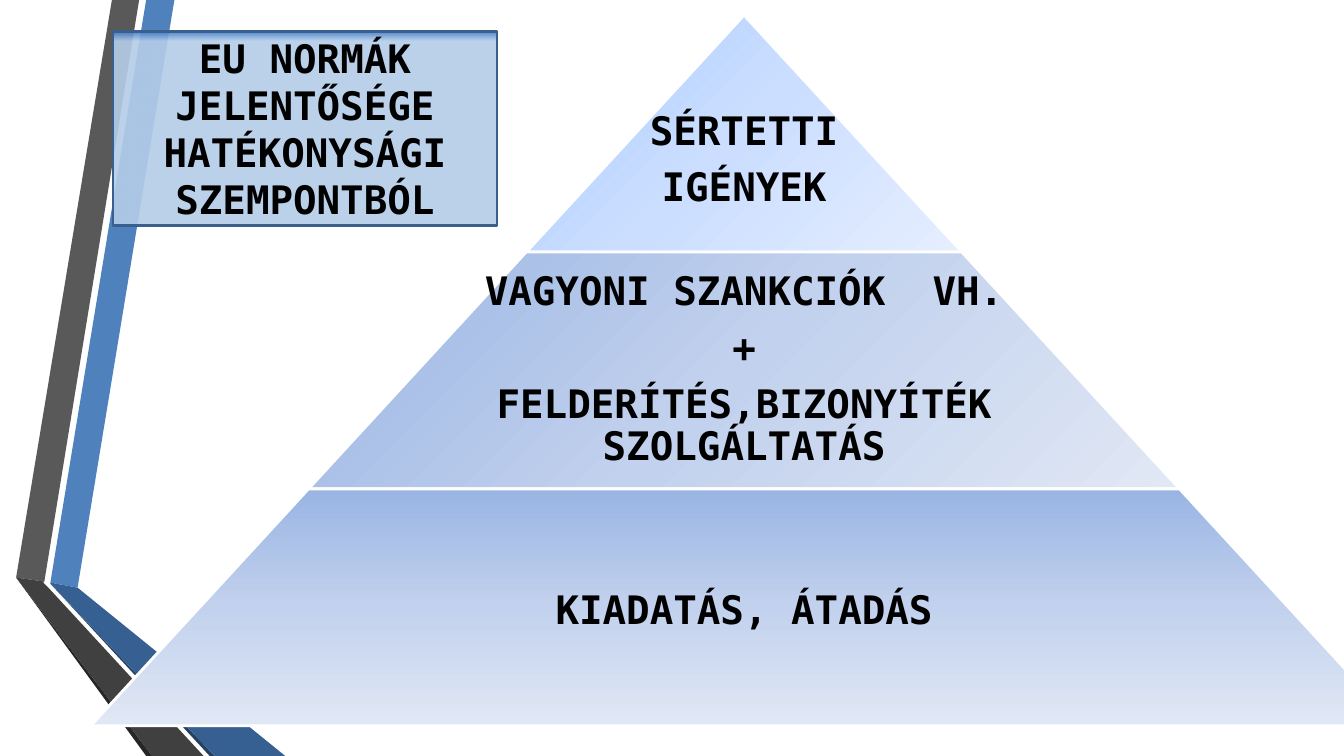
"""Build a slide with a three-level pyramid beside a boxed title."""
from dataclasses import dataclass

from lxml.etree import SubElement
from pptx import Presentation
from pptx.dml.color import RGBColor
from pptx.enum.shapes import MSO_SHAPE as SHAPE
from pptx.enum.text import MSO_ANCHOR as ANCHOR, MSO_AUTO_SIZE as AUTO, PP_ALIGN as ALIGN
from pptx.oxml.ns import qn
from pptx.slide import Slide
from pptx.util import Emu, Pt

PX = 9144
APEX_X, APEX_Y, STEP_W, STEP_H = 738, 15, 432, 235


@dataclass(frozen=True)
class Stop:
    position: int
    color: str
    alpha: int = 100


@dataclass(frozen=True)
class Theme:
    font: str = "DejaVu Sans Mono"
    size: int = 28
    ink: str = "000000"
    edge: str = "FFFFFF"
    title_edge: str = "3A5F8C"
    line: int = 2
    light: tuple[Stop, ...] = (Stop(0, "ACCDFF"), Stop(50, "CBDEFF"), Stop(100, "E5EEFF"))
    deep: tuple[Stop, ...] = (Stop(0, "9AB5E4"), Stop(50, "C2D1ED"), Stop(100, "E1E8F5"))
    title: tuple[Stop, ...] = (Stop(95, "B5CDE9", 90), Stop(100, "3D7CC7", 90),
                               Stop(100, "3A7CCB", 90))


@dataclass(frozen=True)
class Ribbon:
    color: str
    points: tuple[tuple[int, int], ...]


@dataclass(frozen=True)
class Level:
    lines: tuple[str, ...]
    stops: tuple[Stop, ...]
    angle: int
    text_width: int
    top_inset: int


THEME = Theme()
TITLE = "EU NORMÁK JELENTŐSÉGE HATÉKONYSÁGI SZEMPONTBÓL"
RIBBONS = (
    Ribbon("4F81BD", ((50, 578), (77, 583), (173, 0), (145, 0))),
    Ribbon("595959", ((138, 0), (111, 0), (16, 573), (44, 577))),
    Ribbon("262626", ((16, 573), (145, 750), (151, 750))),
    Ribbon("254061", ((50, 579), (208, 750), (213, 750))),
    Ribbon("376092", ((50, 579), (213, 750), (283, 750), (77, 583), (50, 578))),
    Ribbon("404040", ((202, 750), (48, 583), (43, 578), (44, 577), (16, 573), (151, 750))),
)
LEVELS = (
    Level(("SÉRTETTI", "IGÉNYEK"), THEME.light, 45, 432, 58),
    Level(("VAGYONI SZANKCIÓK  VH.", "+", "FELDERÍTÉS,BIZONYÍTÉK SZOLGÁLTATÁS"),
          THEME.deep, 45, 562, 4),
    Level(("KIADATÁS, ÁTADÁS",), THEME.deep, 90, 842, 13),
)


def px(*lengths: int) -> list[Emu]:
    """Turn px lengths into EMU."""
    return [Emu(n * PX) for n in lengths]


def style(p) -> None:
    """Centre a paragraph and set its font."""
    p.alignment = ALIGN.CENTER
    font = p.font
    font.name, font.size, font.bold = THEME.font, Pt(THEME.size), True
    font.color.rgb = RGBColor.from_string(THEME.ink)


def paint(sp, stops: tuple[Stop, ...], angle: int, edge: str) -> None:
    """Give a shape a gradient fill and an outline."""
    sp.fill.gradient()
    sp.fill.gradient_angle = -angle % 360
    gs_list = sp._element.spPr.find(qn("a:gradFill")).find(qn("a:gsLst"))
    gs_list[:] = []
    for stop in stops:
        gs = SubElement(gs_list, qn("a:gs"), pos=str(stop.position * 1000))
        color = SubElement(gs, qn("a:srgbClr"), val=stop.color)
        if stop.alpha < 100:
            SubElement(color, qn("a:alpha"), val=str(stop.alpha * 1000))
    sp.line.color.rgb = RGBColor.from_string(edge)
    sp.line.width = Pt(THEME.line)


def add_ribbon(s: Slide, ribbon: Ribbon) -> None:
    """Draw one facet of the folded ribbon."""
    builder = s.shapes.build_freeform(*ribbon.points[0], scale=PX)
    builder.add_line_segments(ribbon.points[1:], close=True)
    sp = builder.convert_to_shape()
    sp.shadow.inherit = False
    sp.fill.solid()
    sp.fill.fore_color.rgb = RGBColor.from_string(ribbon.color)
    sp.line.fill.background()


def add_level(s: Slide, index: int, level: Level) -> None:
    """Draw one pyramid level and its text."""
    width, top = STEP_W * (index + 1), APEX_Y + STEP_H * index
    sp = s.shapes.add_shape(SHAPE.TRAPEZOID, *px(APEX_X - width // 2, top, width, STEP_H))
    sp.adjustments[0] = STEP_W / 2 / STEP_H
    sp.shadow.inherit = False
    paint(sp, level.stops, level.angle, THEME.edge)

    left = APEX_X - level.text_width // 2
    tf = s.shapes.add_textbox(*px(left, top, level.text_width, STEP_H)).text_frame
    tf.word_wrap = True
    tf.vertical_anchor = ANCHOR.MIDDLE
    tf.margin_left, tf.margin_top, tf.margin_right, tf.margin_bottom = px(
        4, level.top_inset, 4, 4)
    for i, line in enumerate(level.lines):
        p = tf.add_paragraph() if i else tf.paragraphs[0]
        p.text = line
        p.line_spacing = 0.9
        p.space_after = Pt(10)
        style(p)


def add_title(s: Slide) -> None:
    """Format the title placeholder as a translucent box in front."""
    sp = s.shapes.title
    s.shapes._spTree.append(sp._element)
    sp.left, sp.top, sp.width, sp.height = px(112, 31, 381, 193)
    paint(sp, THEME.title, 270, THEME.title_edge)
    tf = sp.text_frame
    tf.text = TITLE
    tf.word_wrap = True
    tf.auto_size = AUTO.NONE
    tf.vertical_anchor = ANCHOR.MIDDLE
    style(tf.paragraphs[0])


def main() -> None:
    """Build and save the slide."""
    prs = Presentation()
    prs.slide_width, prs.slide_height = px(1333, 750)
    s = prs.slides.add_slide(prs.slide_layouts[5])
    for ribbon in RIBBONS:
        add_ribbon(s, ribbon)
    for index, level in enumerate(LEVELS):
        add_level(s, index, level)
    add_title(s)
    prs.save("out.pptx")


if __name__ == "__main__":
    main()
